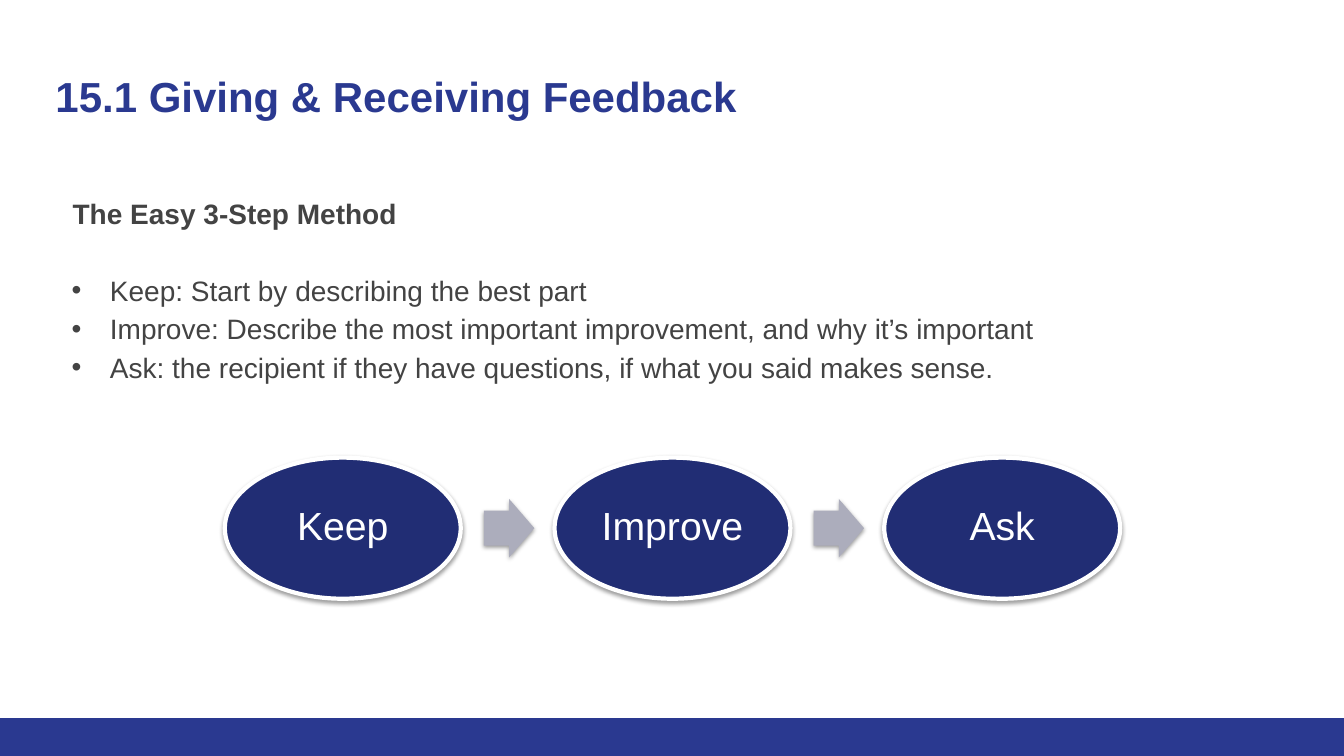
from lxml import etree
from pptx import Presentation
from pptx.dml.color import RGBColor
from pptx.enum.shapes import MSO_SHAPE
from pptx.enum.text import MSO_ANCHOR, MSO_AUTO_SIZE, PP_ALIGN
from pptx.oxml import parse_xml
from pptx.oxml.ns import nsdecls, qn
from pptx.util import Inches, Pt

RECTANGLE, OVAL, ARROW = MSO_SHAPE.RECTANGLE, MSO_SHAPE.OVAL, MSO_SHAPE.RIGHT_ARROW
TOP, MIDDLE = MSO_ANCHOR.TOP, MSO_ANCHOR.MIDDLE
LEFT, CENTER = PP_ALIGN.LEFT, PP_ALIGN.CENTER
NO_FIT = MSO_AUTO_SIZE.NONE

WIDTH, HEIGHT = 13.33, 7.5
MARGIN, CONTENT_WIDTH = 0.45, 12.42
BLUE, NAVY, GRAY, ARROW_GRAY, WHITE = "2A3990", "212D74", "434343", "ACADBC", "FFFFFF"

HEADING = "The Easy 3-Step Method"
BULLETS = [
    "Keep: Start by describing the best part",
    "Improve: Describe the most important improvement, and why it’s important",
    "Ask: the recipient if they have questions, if what you said makes sense.",
]
STEPS = ["Keep", "Improve", "Ask"]
STEP_LEFT, STEP_PITCH, STEP_WIDTH, STEP_HEIGHT = 2.23, 3.27, 2.34, 1.4
STEP_MIDDLE = 5.24
ARROW_OFFSET, ARROW_WIDTH, ARROW_HEIGHT = 2.57, 0.5, 0.58


def color(hex_code):
    return RGBColor.from_string(hex_code)


def place(shape, left, top, width, height):
    shape.left, shape.top = Inches(left), Inches(top)
    shape.width, shape.height = Inches(width), Inches(height)


def set_frame(frame, inset, anchor):
    frame.margin_left = frame.margin_right = Inches(inset)
    frame.margin_top = frame.margin_bottom = Inches(inset)
    frame.vertical_anchor = anchor
    frame.word_wrap = True
    frame.auto_size = NO_FIT


def format_para(para, size, hex_code, bold=False, align=LEFT, spacing=1.0, before=0):
    para.alignment = align
    para.line_spacing = spacing
    para.space_before = Pt(before)
    para.space_after = Pt(0)
    for span in para.runs:
        span.font.name = "Arial"
        span.font.size = Pt(size)
        span.font.bold = bold
        span.font.color.rgb = color(hex_code)


def set_bullet(para, margin, indent, bullet=None):
    properties = para._p.get_or_add_pPr()
    properties.set("marL", str(Inches(margin)))
    properties.set("indent", str(Inches(indent)))
    if bullet:
        etree.SubElement(properties, qn("a:buFont")).set("typeface", "Arial")
        etree.SubElement(properties, qn("a:buChar")).set("char", bullet)
    else:
        etree.SubElement(properties, qn("a:buNone"))


def add_filled(page, kind, bounds, fill):
    shape = page.shapes.add_shape(kind, *(Inches(length) for length in bounds))
    shape.shadow.inherit = False
    shape.fill.solid()
    shape.fill.fore_color.rgb = color(fill)
    shape.line.fill.background()
    return shape


def add_drop_shadow(shape):
    effects = shape._element.spPr.find(qn("a:effectLst"))
    effects.append(parse_xml(
        f'<a:outerShdw {nsdecls("a")} blurRad="{Pt(3.1)}" dist="{Pt(1.6)}" '
        'dir="5400000" rotWithShape="0"><a:srgbClr val="000000">'
        '<a:alpha val="38000"/></a:srgbClr></a:outerShdw>'))


def add_title(page, text):
    title = page.shapes.title
    place(title, MARGIN, 0.08 * HEIGHT, CONTENT_WIDTH, 0.89)
    set_frame(title.text_frame, 0.1, TOP)
    title.text_frame.text = text
    format_para(title.text_frame.paragraphs[0], 30, BLUE, bold=True)


def add_method(page):
    body = page.placeholders[1]
    place(body, MARGIN, 0.24 * HEIGHT, CONTENT_WIDTH, 2.3)
    frame = body.text_frame
    set_frame(frame, 0.1, TOP)
    frame.text = "\n".join([HEADING] + BULLETS)
    for index, para in enumerate(frame.paragraphs):
        if index == 0:
            set_bullet(para, 0.17, 0)
        else:
            set_bullet(para, 0.54, -0.38, "•")
        format_para(para, 20, GRAY, bold=index == 0, spacing=1.15,
                    before=27 if index == 1 else 0)


def add_step(page, left, label):
    bounds = (left, STEP_MIDDLE - STEP_HEIGHT / 2, STEP_WIDTH, STEP_HEIGHT)
    step = add_filled(page, OVAL, bounds, NAVY)
    step.line.color.rgb = color(WHITE)
    step.line.width = Pt(3)
    add_drop_shadow(step)
    set_frame(step.text_frame, 0.12, MIDDLE)
    step.text_frame.text = label
    format_para(step.text_frame.paragraphs[0], 28, WHITE, align=CENTER, spacing=0.9)


def add_arrow(page, left):
    bounds = (left, STEP_MIDDLE - ARROW_HEIGHT / 2, ARROW_WIDTH, ARROW_HEIGHT)
    arrow = add_filled(page, ARROW, bounds, ARROW_GRAY)
    arrow.adjustments[0], arrow.adjustments[1] = 0.6, 0.5
    add_drop_shadow(arrow)


def main():
    deck = Presentation()
    deck.slide_width, deck.slide_height = Inches(WIDTH), Inches(HEIGHT)
    page = deck.slides.add_slide(deck.slide_layouts[1])
    add_filled(page, RECTANGLE, (0, 0.95 * HEIGHT, WIDTH, 0.05 * HEIGHT), BLUE)
    add_title(page, "15.1 Giving & Receiving Feedback")
    add_method(page)
    for index, label in enumerate(STEPS):
        left = STEP_LEFT + index * STEP_PITCH
        add_step(page, left, label)
        if index < len(STEPS) - 1:
            add_arrow(page, left + ARROW_OFFSET)
    deck.save("out.pptx")


if __name__ == "__main__":
    main()
